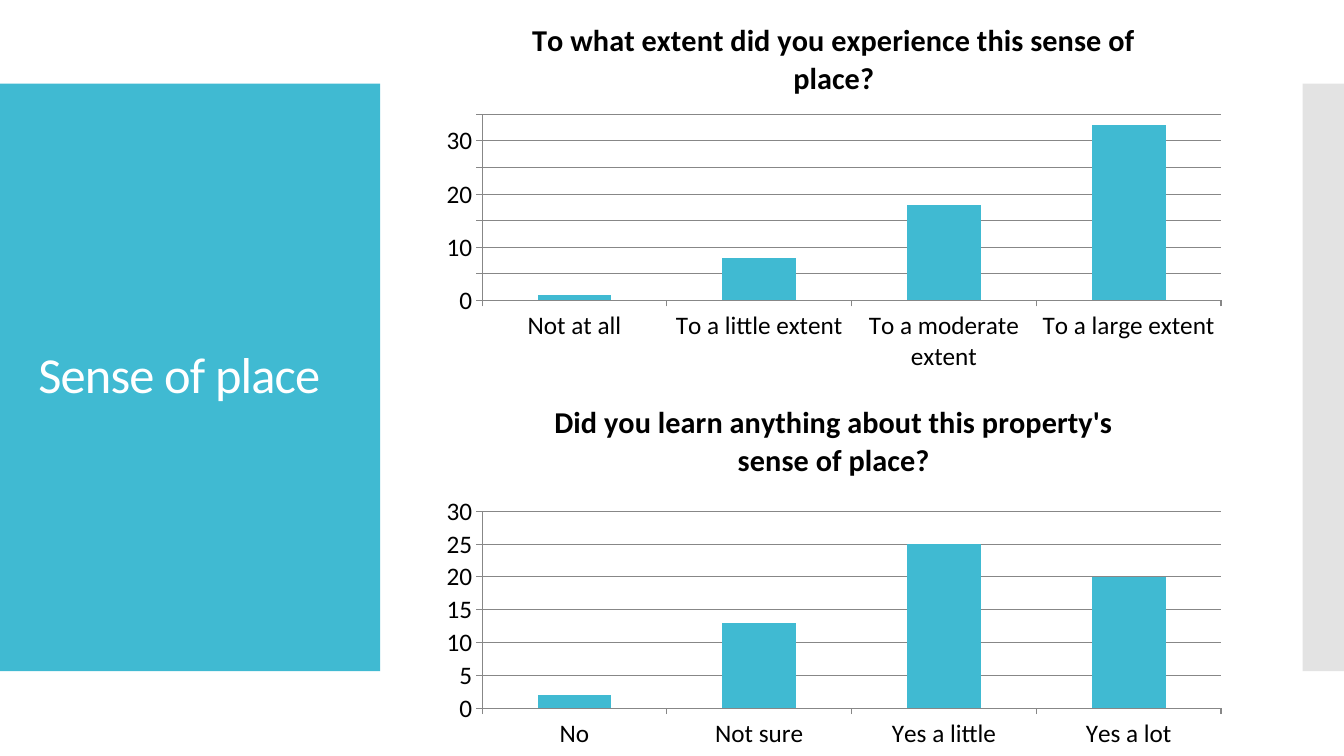
from lxml import etree
from pptx import Presentation
from pptx import util as u
from pptx.chart.data import CategoryChartData
from pptx.dml.color import RGBColor
from pptx.enum import chart as charts, shapes, text
from pptx.oxml.ns import qn


def color(value):
    return RGBColor.from_string(value)


class SlideBuilder:
    font = "Calibri"
    accent = "40BAD2"
    gray = "C8C8C8"
    grid = "878787"
    ink = "000000"
    white = "FFFFFF"

    def __init__(self, deck):
        self.slide = deck.slides.add_slide(deck.slide_layouts[5])

    def style_font(self, font, size, fill, bold=False):
        font.name = self.font
        font.size = u.Pt(size)
        font.bold = bold
        font.color.rgb = color(fill)

    def panel(self, left, width, fill, opacity=100):
        box = self.slide.shapes.add_shape(
            shapes.MSO_SHAPE.RECTANGLE,
            u.Inches(left), u.Inches(0.83), u.Inches(width), u.Inches(5.83))
        box.shadow.inherit = False
        box.fill.solid()
        box.fill.fore_color.rgb = color(fill)
        box.line.fill.background()
        if opacity < 100:
            tone = box.fill._xPr.find(".//" + qn("a:srgbClr"))
            etree.SubElement(tone, qn("a:alpha"), val=str(opacity * 1000))

    def title(self, words, left, top, width, height):
        box = self.slide.shapes.title
        box.left, box.top = u.Inches(left), u.Inches(top)
        box.width, box.height = u.Inches(width), u.Inches(height)
        self.slide.shapes._spTree.append(box._element)
        frame = box.text_frame
        frame.text = words
        frame.word_wrap = True
        frame.auto_size = text.MSO_AUTO_SIZE.NONE
        frame.vertical_anchor = text.MSO_ANCHOR.MIDDLE
        para = frame.paragraphs[0]
        para.alignment = text.PP_ALIGN.LEFT
        para.line_spacing = 0.9
        span = para.runs[0]
        self.style_font(span.font, 36, self.white)
        span._r.get_or_add_rPr().set("spc", "-60")

    def column_chart(self, question, answers, top, height):
        data = CategoryChartData()
        data.categories = list(answers)
        data.add_series(question, list(answers.values()))
        chart = self.slide.shapes.add_chart(
            charts.XL_CHART_TYPE.COLUMN_CLUSTERED,
            u.Inches(4.27), u.Inches(top), u.Inches(8), u.Inches(height),
            data).chart
        self.style_font(chart.font, 18, self.ink)
        chart.has_legend = False
        chart.has_title = True
        chart.chart_title.include_in_layout = False
        frame = chart.chart_title.text_frame
        frame.text = question
        self.style_font(frame.paragraphs[0].runs[0].font, 21.6, self.ink, True)

        plot = chart.plots[0]
        plot.gap_width = 150
        plot.vary_by_categories = False
        bars = plot.series[0].format.fill
        bars.solid()
        bars.fore_color.rgb = color(self.accent)

        values = chart.value_axis
        values.has_major_gridlines = True
        for axis in (chart.category_axis, values):
            axis.major_tick_mark = charts.XL_TICK_MARK.OUTSIDE
            axis.minor_tick_mark = charts.XL_TICK_MARK.NONE
        for part in (chart.category_axis, values, values.major_gridlines):
            part.format.line.color.rgb = color(self.grid)
            part.format.line.width = u.Pt(0.75)


def main():
    deck = Presentation()
    deck.slide_width, deck.slide_height = u.Inches(13.33), u.Inches(7.5)
    page = SlideBuilder(deck)
    page.panel(0, 3.77, page.accent)
    page.panel(12.92, 0.41, page.gray, opacity=50)
    page.title("Sense of place", 0.28, 1.23, 3.22, 5.03)
    page.column_chart(
        "To what extent did you experience this sense of place?",
        {"Not at all": 1, "To a little extent": 8,
         "To a moderate extent": 18, "To a large extent": 33},
        top=0, height=3.76)
    page.column_chart(
        "Did you learn anything about this property's sense of place?",
        {"No": 2, "Not sure": 13, "Yes a little": 25, "Yes a lot": 20},
        top=3.79, height=3.71)
    deck.save("out.pptx")


if __name__ == "__main__":
    main()
